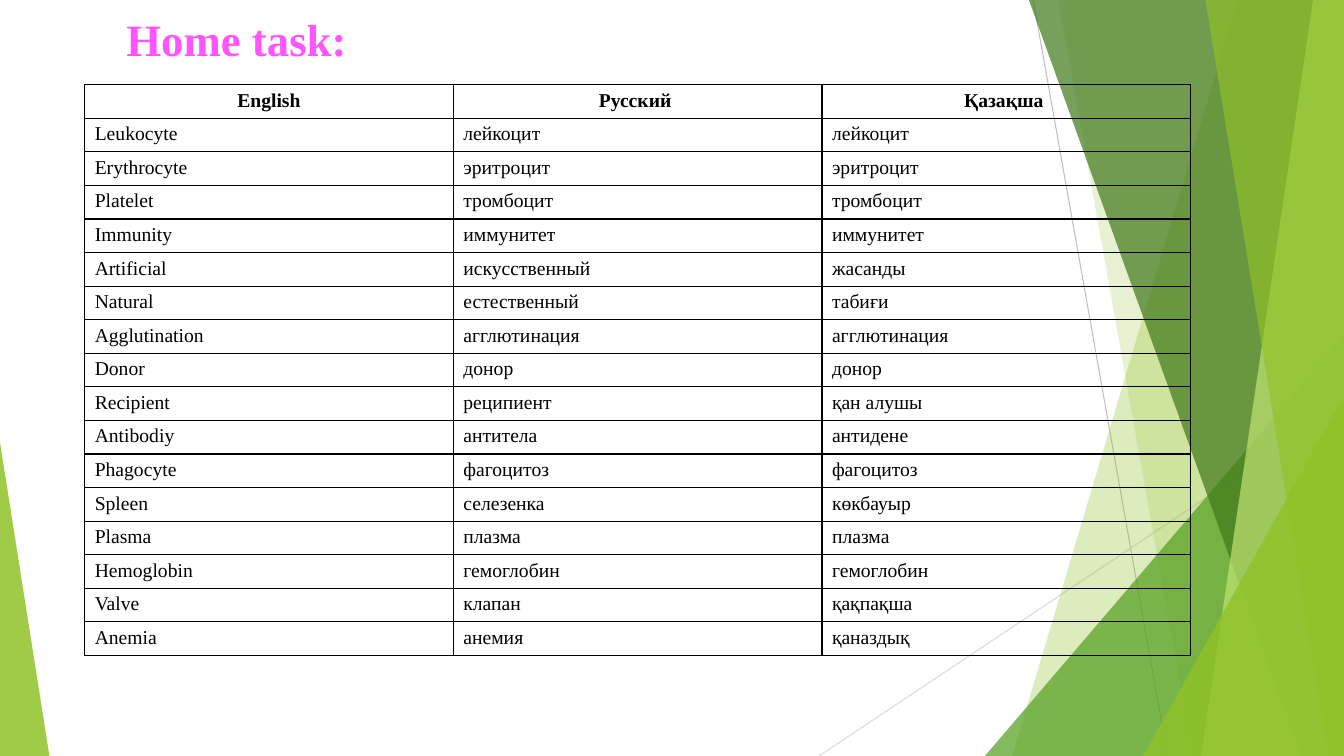
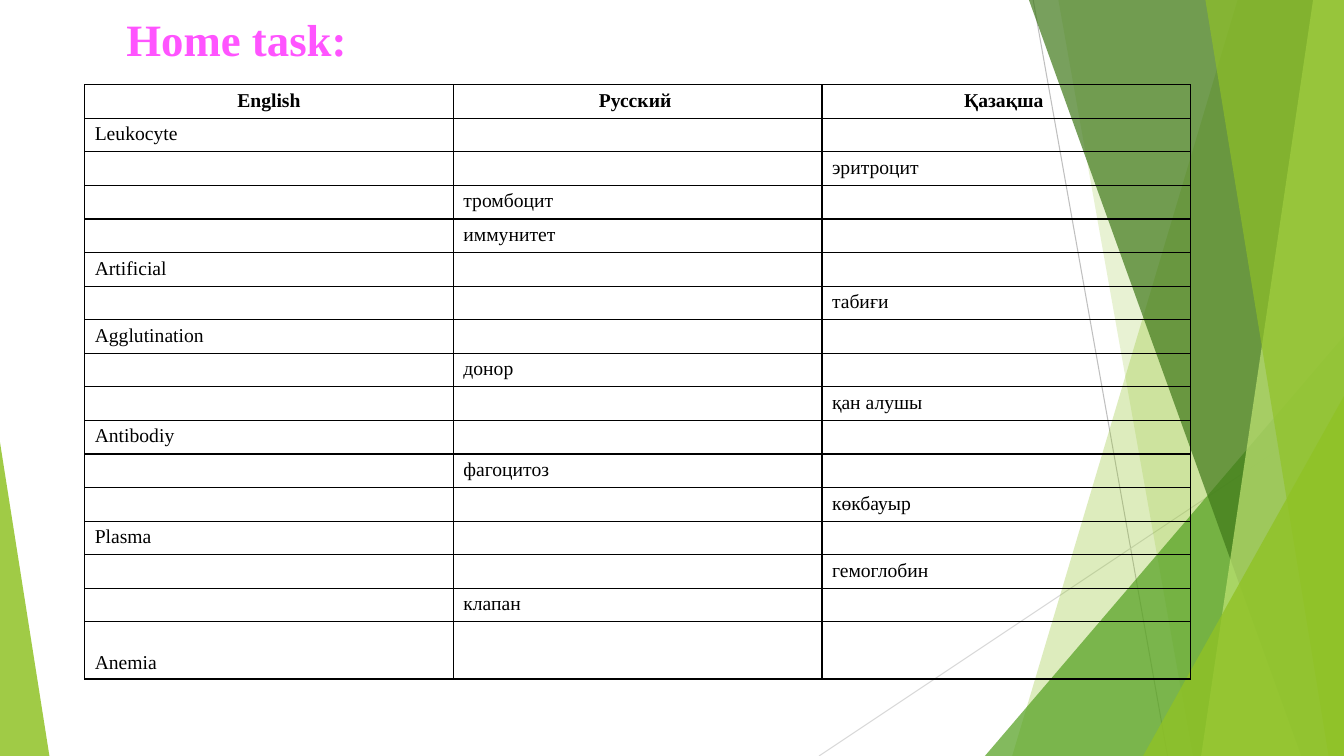
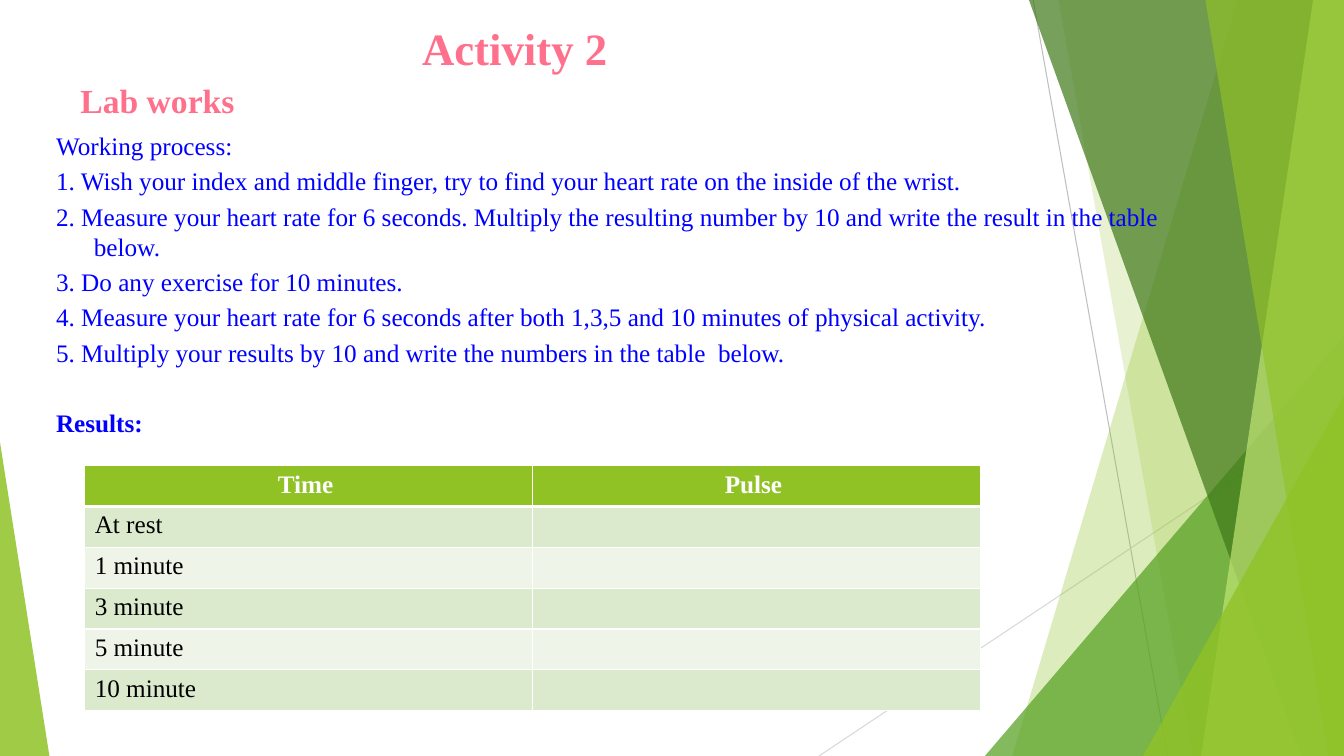
"""Build the blood vocabulary home task and the pulse lab work slides."""
from lxml.etree import SubElement
from pptx import Presentation
from pptx.dml.color import RGBColor
from pptx.enum.shapes import MSO_CONNECTOR, MSO_SHAPE
from pptx.enum.text import MSO_ANCHOR, MSO_AUTO_SIZE, PP_ALIGN
from pptx.oxml import parse_xml
from pptx.oxml.ns import nsdecls, qn
from pptx.util import Pt

FONT = "Times New Roman"
BLACK = RGBColor(0x00, 0x00, 0x00)
WHITE = RGBColor(0xFF, 0xFF, 0xFF)
BLUE = RGBColor(0x00, 0x00, 0xFF)
MAGENTA = RGBColor(0xFF, 0x54, 0xFF)
PINK = RGBColor(0xFF, 0x70, 0x8C)
LIME = RGBColor(0x90, 0xC2, 0x26)
GREEN = RGBColor(0x54, 0xA0, 0x21)
FOREST = RGBColor(0x3F, 0x78, 0x19)
PALE_LIME = RGBColor(0xC0, 0xE4, 0x74)
ROW_DARK = RGBColor(0xDB, 0xE9, 0xCD)
ROW_LIGHT = RGBColor(0xEE, 0xF4, 0xE8)
GREY = RGBColor(0xBF, 0xBF, 0xBF)
LIGHT_GREY = RGBColor(0xD9, 0xD9, 0xD9)
WIDTH, HEIGHT = 960, 540

RAYS = [(738, 0, 834, HEIGHT, GREY), (WIDTH, 290, 585, HEIGHT, LIGHT_GREY)]
FACETS = [
    ("band", (884, 723), LIME, 30),
    ("band", (756, 852), LIME, 20),
    ("triangle", (703.5, 240, 256.5, 300, 1), GREEN, 72),
    ("band", (735, 929.5), FOREST, 70),
    ("band", (938, 858), PALE_LIME, 70),
    ("band", (861, 949), LIME, 65),
    ("triangle", (816.5, 283, 143.5, 257, 1), LIME, 80),
    ("triangle", (0, 316, 35.3, 224, 0), LIME, 85),
]

HEADINGS = ("English", "Русский ", "Қазақша ")
WORDS = [
    ("Leukocyte", "лейкоцит", "лейкоцит"),
    ("Erythrocyte", "эритроцит", "эритроцит"),
    ("Platelet", "тромбоцит", "тромбоцит"),
    ("Immunity", "иммунитет", "иммунитет"),
    ("Artificial", "искусственный", "жасанды"),
    ("Natural", "естественный", "табиғи"),
    ("Agglutination", "агглютинация", "агглютинация"),
    ("Donor", "донор", "донор"),
    ("Recipient", "реципиент", "қан алушы"),
    ("Antibodiy", "антитела", "антидене"),
    ("Phagocyte", "фагоцитоз", "фагоцитоз"),
    ("Spleen", "селезенка", "көкбауыр"),
    ("Plasma", "плазма", "плазма"),
    ("Hemoglobin", "гемоглобин", "гемоглобин"),
    ("Valve", "клапан", "қақпақша"),
    ("Anemia", "анемия", "қаназдық"),
]
GIVEN_COLUMNS = [0, 2, 1, 1, 0, 2, 0, 1, 2, 0, 1, 2, 0, 2, 1, 0]
GAPPED_WORDS = [
    tuple(word if column == given else "" for column, word in enumerate(row))
    for row, given in zip(WORDS, GIVEN_COLUMNS)
]
STEPS = [
    "Working process:",
    "1. Wish your index and middle finger, try to find your heart rate on the inside of the wrist.",
    "2. Measure your heart rate for 6 seconds. Multiply the resulting number by 10 and write the result in the table  below.",
    "3. Do any exercise for 10 minutes.",
    "4. Measure your heart rate for 6 seconds after both 1,3,5 and 10 minutes of physical activity.",
    "5. Multiply your results by 10 and write the numbers in the table  below.",
    "Results:",
]
TIMES = ["At rest", "1 minute", "3 minute", "5 minute", "10 minute"]


def style(para, size, colour, bold=False, align=PP_ALIGN.LEFT):
    para.alignment = align
    para.font.name = FONT
    para.font.size = Pt(size)
    para.font.bold = bold
    para.font.color.rgb = colour
    if not para.text:
        SubElement(para._p, qn("a:endParaRPr"), sz=str(size * 100))


def add_grid(page, rows, place, size, line_colour, fills, heading_colour, heading_rule):
    frame = page.shapes.add_table(len(rows), len(rows[0]), *map(Pt, place))
    grid = frame.table
    grid.first_row = grid.horz_banding = False
    for r, row in enumerate(rows):
        for c, text in enumerate(row):
            cell = grid.cell(r, c)
            cell.text = text
            heading = r == 0
            style(cell.text_frame.paragraphs[0], size,
                  heading_colour if heading else BLACK, heading,
                  PP_ALIGN.CENTER if heading else PP_ALIGN.LEFT)
            if fills:
                cell.fill.solid()
                cell.fill.fore_color.rgb = fills[0] if heading else fills[2 - r % 2]
            else:
                cell.fill.background()
            rules = {"L": 1, "R": 1,
                     "T": heading_rule if r == 1 else 1,
                     "B": heading_rule if heading else 1}
            for position, (side, width) in enumerate(rules.items()):
                cell._tc.get_or_add_tcPr().insert(position, parse_xml(
                    f'<a:ln{side} {nsdecls("a")} w="{Pt(width)}"><a:solidFill>'
                    f'<a:srgbClr val="{line_colour}"/></a:solidFill></a:ln{side}>'))
    return grid


deck = Presentation()
deck.slide_width, deck.slide_height = Pt(WIDTH), Pt(HEIGHT)
layout = deck.slide_layouts[5]
for holder in list(layout.placeholders):
    if holder.placeholder_format.idx != 0:
        layout.shapes.element.remove(holder.element)
pages = [deck.slides.add_slide(layout) for _ in range(3)]

backdrop = []
for x1, y1, x2, y2, colour in RAYS:
    ray = pages[0].shapes.add_connector(MSO_CONNECTOR.STRAIGHT, Pt(x1), Pt(y1), Pt(x2), Pt(y2))
    ray.line.color.rgb = colour
    ray.line.width = Pt(0.75)
    SubElement(ray.element.spPr, qn("a:effectLst"))
    backdrop.append(ray)
for kind, numbers, colour, opacity in FACETS:
    if kind == "band":
        top, bottom = numbers
        outline = pages[0].shapes.build_freeform(Pt(top), Pt(0))
        outline.add_line_segments(
            [(Pt(x), Pt(y)) for x, y in [(WIDTH, 0), (WIDTH, HEIGHT), (bottom, HEIGHT)]])
        facet = outline.convert_to_shape()
    else:
        *place, apex = numbers
        facet = pages[0].shapes.add_shape(MSO_SHAPE.ISOSCELES_TRIANGLE, *map(Pt, place))
        facet.adjustments[0] = apex
    facet.shadow.inherit = False
    facet.fill.solid()
    facet.fill.fore_color.rgb = colour
    facet.line.fill.background()
    tint = facet.element.spPr.find(".//" + qn("a:srgbClr"))
    SubElement(tint, qn("a:alpha"), val=str(opacity * 1000))
    backdrop.append(facet)
for position, shape in enumerate(backdrop, start=2):
    layout.shapes.element.insert(position, shape.element)

TITLES = [
    ("Home task:", (83, 5, 612.5, 111.5), MAGENTA, PP_ALIGN.LEFT),
    ("Home task:", (83, 5, 612.5, 111.5), MAGENTA, PP_ALIGN.LEFT),
    ("Activity 2", (293.5, 11, 148.5, 46), PINK, PP_ALIGN.CENTER),
]
for page, (text, place, colour, align) in zip(pages, TITLES):
    title = page.shapes.title
    title.left, title.top, title.width, title.height = map(Pt, place)
    title.text_frame.text = text
    title.text_frame.auto_size = MSO_AUTO_SIZE.NONE
    title.text_frame.vertical_anchor = MSO_ANCHOR.TOP
    title.text_frame.word_wrap = align == PP_ALIGN.LEFT
    style(title.text_frame.paragraphs[0], 32, colour, True, align)

for page, words in zip(pages, (WORDS, GAPPED_WORDS)):
    vocabulary = add_grid(page, [HEADINGS, *words], (60.5, 60.5, 790, 408), 14,
                          BLACK, None, BLACK, 1)
vocabulary.rows[len(WORDS)].height = Pt(40.8)
vocabulary.cell(len(WORDS), 0).vertical_anchor = MSO_ANCHOR.BOTTOM

lab = pages[2]
box = lab.shapes.add_textbox(Pt(49.5), Pt(53.5), Pt(126), Pt(36))
box.text_frame.word_wrap = False
box.text_frame.text = "Lab works"
style(box.text_frame.paragraphs[0], 24, PINK, True, PP_ALIGN.CENTER)

box = lab.shapes.add_textbox(Pt(33), Pt(89.5), Pt(834), Pt(436))
box.text_frame.word_wrap = True
box.text_frame.text = "\n".join(STEPS)
for para in box.text_frame.paragraphs:
    results = para.text == "Results:"
    style(para, 18, BLUE, results)
    para.space_before = Pt(28.8 if results else 3.6)
    properties = para._p.get_or_add_pPr()
    properties.set("marL", str(Pt(27)))
    properties.set("indent", str(Pt(-27)))

add_grid(lab, [("Time ", "Pulse "), *((time, "") for time in TIMES)],
         (60.5, 332.5, 640, 175.2), 18, WHITE, (LIME, ROW_DARK, ROW_LIGHT), WHITE, 3)

deck.save("out.pptx")
